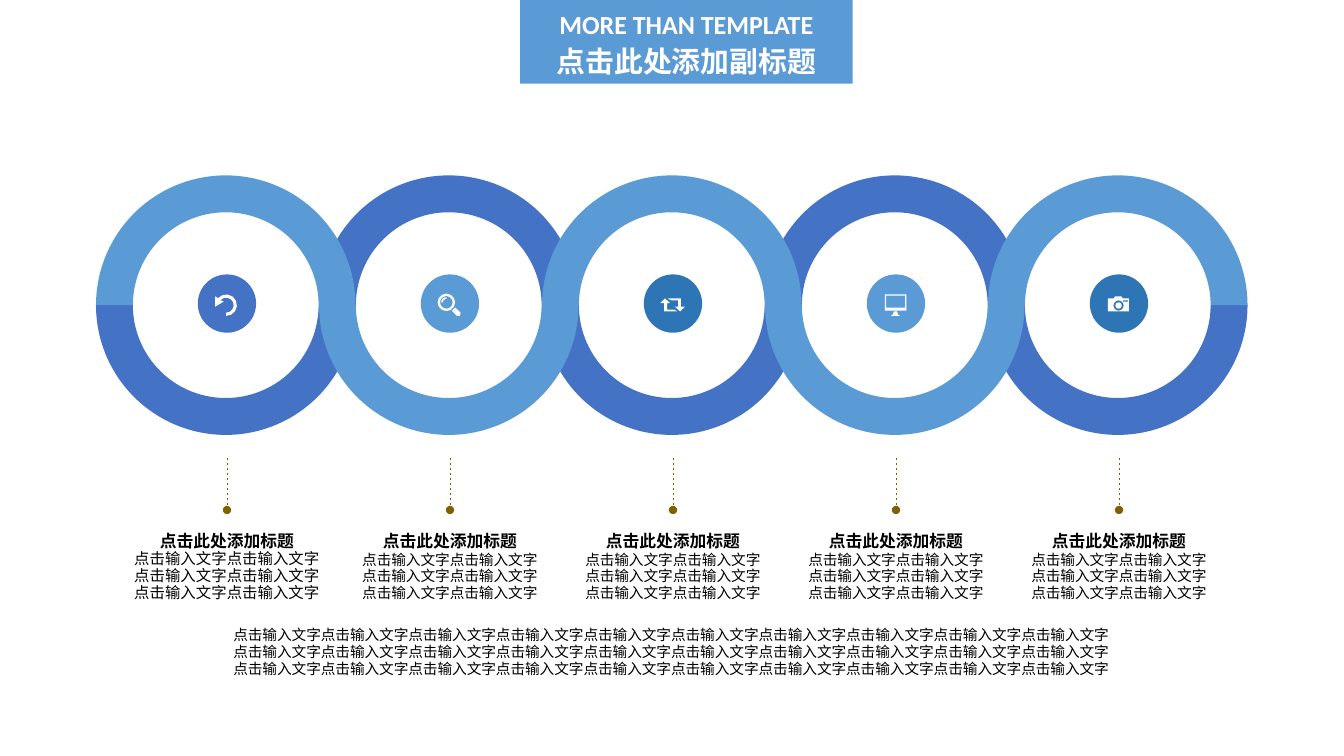
from math import cos, radians, sin

from lxml import etree
from pptx import Presentation
from pptx.dml.color import RGBColor
from pptx.enum.dml import MSO_LINE
from pptx.enum.shapes import MSO_CONNECTOR, MSO_SHAPE
from pptx.enum.text import MSO_ANCHOR, MSO_AUTO_SIZE, PP_ALIGN
from pptx.oxml.ns import qn
from pptx.util import Cm, Pt

OVAL, BLOCK_ARC = MSO_SHAPE.OVAL, MSO_SHAPE.BLOCK_ARC
STRAIGHT, DASH = MSO_CONNECTOR.STRAIGHT, MSO_LINE.DASH
MIDDLE, TOP, CENTER = MSO_ANCHOR.MIDDLE, MSO_ANCHOR.TOP, PP_ALIGN.CENTER
NO_FIT, GROW = MSO_AUTO_SIZE.NONE, MSO_AUTO_SIZE.SHAPE_TO_FIT_TEXT


class Theme:
    light, dark, deep = "5B9BD5", "4472C4", "2E75B6"
    white, black, olive = "FFFFFF", "000000", "806000"
    latin, cjk = "Calibri", "Noto Sans CJK SC"
    banner, subtitle, heading, body, body_large = 18.6, 20.6, 12, 10.5, 11
    leading = Pt(12)


def arc(cx, cy, radius, start=0, end=360, steps=12):
    """Return points along an arc, angles in degrees clockwise from the right."""
    angles = [radians(start + (end - start) * i / steps) for i in range(steps + 1)]
    return [(cx + radius * cos(a), cy + radius * sin(a)) for a in angles]


def band(cx, cy, outer, inner, start, end, steps):
    """Return the outline of a ring segment."""
    return arc(cx, cy, outer, start, end, steps) + arc(cx, cy, inner, end, start, steps)


def box(left, top, right, bottom):
    """Return the corners of a rectangle."""
    return [(left, top), (right, top), (right, bottom), (left, bottom)]


BANNER = ("MORE THAN TEMPLATE", "点击此处添加副标题")
HEADING = "点击此处添加标题"
PHRASE = "点击输入文字"
LINES = 3

UNDO = [[band(-0.02, 0.04, 0.27, 0.19, 222, 450, 8)
         + [(-0.08, -0.05), (-0.3, 0.08), (-0.3, -0.18)]]]
SEARCH = [
    [[(0.13, 0.1), (0.05, 0.18), (0.18, 0.31), (0.25, 0.31), (0.27, 0.23)]],
    [arc(-0.09, -0.03, 0.22), arc(-0.09, -0.03, 0.16)],
    [band(-0.09, -0.03, 0.13, 0.09, 180, 270, 3)],
]
ARROW = [(-0.13, -0.13), (0.2, -0.13), (0.2, 0.08), (0.3, 0.08), (0.18, 0.2),
         (0.05, 0.08), (0.13, 0.08), (0.13, -0.08), (-0.05, -0.08)]
REPEAT = [[ARROW], [[(-0.02 - x, 0.07 - y) for x, y in ARROW]]]
MONITOR = [[
    box(-0.28, -0.23, 0.26, 0.18), box(-0.25, -0.2, 0.23, 0.1),
    [(-0.05, 0.2), (0.03, 0.2), (0.05, 0.28), (0.1, 0.31), (-0.13, 0.31), (-0.08, 0.28)],
]]
CAMERA = [
    [arc(-0.01, 0.05, 0.08)],
    [[(-0.28, -0.13), (-0.13, -0.13), (-0.1, -0.18), (0.06, -0.18),
      (0.1, -0.13), (0.25, -0.13), (0.25, 0.2), (-0.28, 0.2)],
     arc(-0.01, 0.05, 0.13), box(0.1, -0.08, 0.23, -0.05)],
]
STEPS = [
    (UNDO, Theme.dark, Theme.body_large),
    (SEARCH, Theme.light, Theme.body),
    (REPEAT, Theme.deep, Theme.body),
    (MONITOR, Theme.light, Theme.body),
    (CAMERA, Theme.deep, Theme.body),
]

PITCH = 5.62
RING_X, RING_Y, RING_SIZE, RING_BAND = 5.69, 7.69, 6.54, 0.93
HALF_TURN = 108
DISC_X, DISC_Y, DISC_SIZE = 5.72, 7.65, 1.47
LEADER_TOP, LEADER_BOTTOM = 11.53, 12.85
COLUMN = (13.21, 5.59, 2.11)
FOOTER = (4.93, 15.67, 24, 2.39)
BANNER_BOX = (13.11, 0, 8.38, 2.11)


def assign(obj, values):
    """Set attributes from a dict."""
    for name, value in values.items():
        setattr(obj, name, value)


def paint(sp, color):
    """Give a shape a plain fill without line or shadow."""
    sp.fill.solid()
    sp.fill.fore_color.rgb = RGBColor.from_string(color)
    sp.line.fill.background()
    sp.shadow.inherit = False


def add_round(shapes, kind, cx, cy, size, color):
    """Add a preset shape centred on a point."""
    sp = shapes.add_shape(kind, Cm(cx - size / 2), Cm(cy - size / 2), Cm(size), Cm(size))
    paint(sp, color)
    return sp


def add_outline(shapes, contours, color, dx, dy):
    """Draw one filled freeform made of closed contours."""
    paths = [[(Cm(x + dx), Cm(y + dy)) for x, y in c] for c in contours]
    builder = shapes.build_freeform(*paths[0][0], scale=1.0)
    for i, points in enumerate(paths):
        if i:
            builder.move_to(*points[0])
        builder.add_line_segments(points[1:], close=True)
    paint(builder.convert_to_shape(), color)


def write(sp, rows, color, anchor=TOP, fit=GROW):
    """Fill a shape with centred rows of (text, size, bold, spacing, font)."""
    tf = sp.text_frame
    assign(tf, {"word_wrap": True, "auto_size": fit, "vertical_anchor": anchor})
    for i, (text, size, bold, spacing, font) in enumerate(rows):
        p = tf.add_paragraph() if i else tf.paragraphs[0]
        assign(p, {"alignment": CENTER, "line_spacing": spacing,
                   "space_before": Pt(0), "space_after": Pt(0)})
        r = p.add_run()
        r.text = text
        assign(r.font, {"size": Pt(size), "bold": bold, "name": font})
        r.font.color.rgb = RGBColor.from_string(color)
        etree.SubElement(r._r.get_or_add_rPr(), qn("a:ea"), typeface=Theme.cjk)


def body_rows(repeats, size):
    """Return the body lines of a text block."""
    return [(PHRASE * repeats, size, False, Theme.leading, Theme.cjk)] * LINES


def add_leader(shapes, x):
    """Draw a dashed leader that ends in a dot."""
    line = shapes.add_connector(STRAIGHT, Cm(x), Cm(LEADER_TOP), Cm(x), Cm(LEADER_BOTTOM))
    line.line.color.rgb = RGBColor.from_string(Theme.olive)
    assign(line.line, {"width": Pt(0.5), "dash_style": DASH})
    sp_pr = line._element.spPr
    etree.SubElement(sp_pr.find(qn("a:ln")), qn("a:tailEnd"), type="oval")
    etree.SubElement(sp_pr, qn("a:effectLst"))


def main():
    """Build the slide and save it."""
    prs = Presentation()
    assign(prs, {"slide_width": Cm(33.87), "slide_height": Cm(19.05)})
    s = prs.slides.add_slide(prs.slide_layouts[5])
    shapes = s.shapes

    title = shapes.title
    assign(title, dict(zip(("left", "top", "width", "height"), map(Cm, BANNER_BOX))))
    title.fill.solid()
    title.fill.fore_color.rgb = RGBColor.from_string(Theme.light)
    write(title, [(BANNER[0], Theme.banner, True, 1.1, Theme.latin),
                  (BANNER[1], Theme.subtitle, True, 1.1, Theme.cjk)],
          Theme.white, MIDDLE, NO_FIT)

    for color, upper_parity in ((Theme.dark, 1), (Theme.light, 0)):
        for i in range(len(STEPS)):
            half = add_round(shapes, BLOCK_ARC, RING_X + i * PITCH, RING_Y, RING_SIZE, color)
            ends = (HALF_TURN, 0) if i % 2 == upper_parity else (0, HALF_TURN)
            for k, value in enumerate((*ends, RING_BAND / RING_SIZE)):
                half.adjustments[k] = value

    top, width, height = COLUMN
    for i, (icon, color, size) in enumerate(STEPS):
        x = DISC_X + i * PITCH
        add_round(shapes, OVAL, x, DISC_Y, DISC_SIZE, color)
        for part in icon:
            add_outline(shapes, part, Theme.white, x, DISC_Y)
        add_leader(shapes, x)
        column = shapes.add_textbox(Cm(x - width / 2), Cm(top), Cm(width), Cm(height))
        heading = (HEADING, Theme.heading, True, 1.1, Theme.cjk)
        write(column, [heading] + body_rows(2, size), Theme.black)

    footer = shapes.add_textbox(*map(Cm, FOOTER))
    write(footer, body_rows(10, Theme.body), Theme.black)
    prs.save("out.pptx")


if __name__ == "__main__":
    main()
